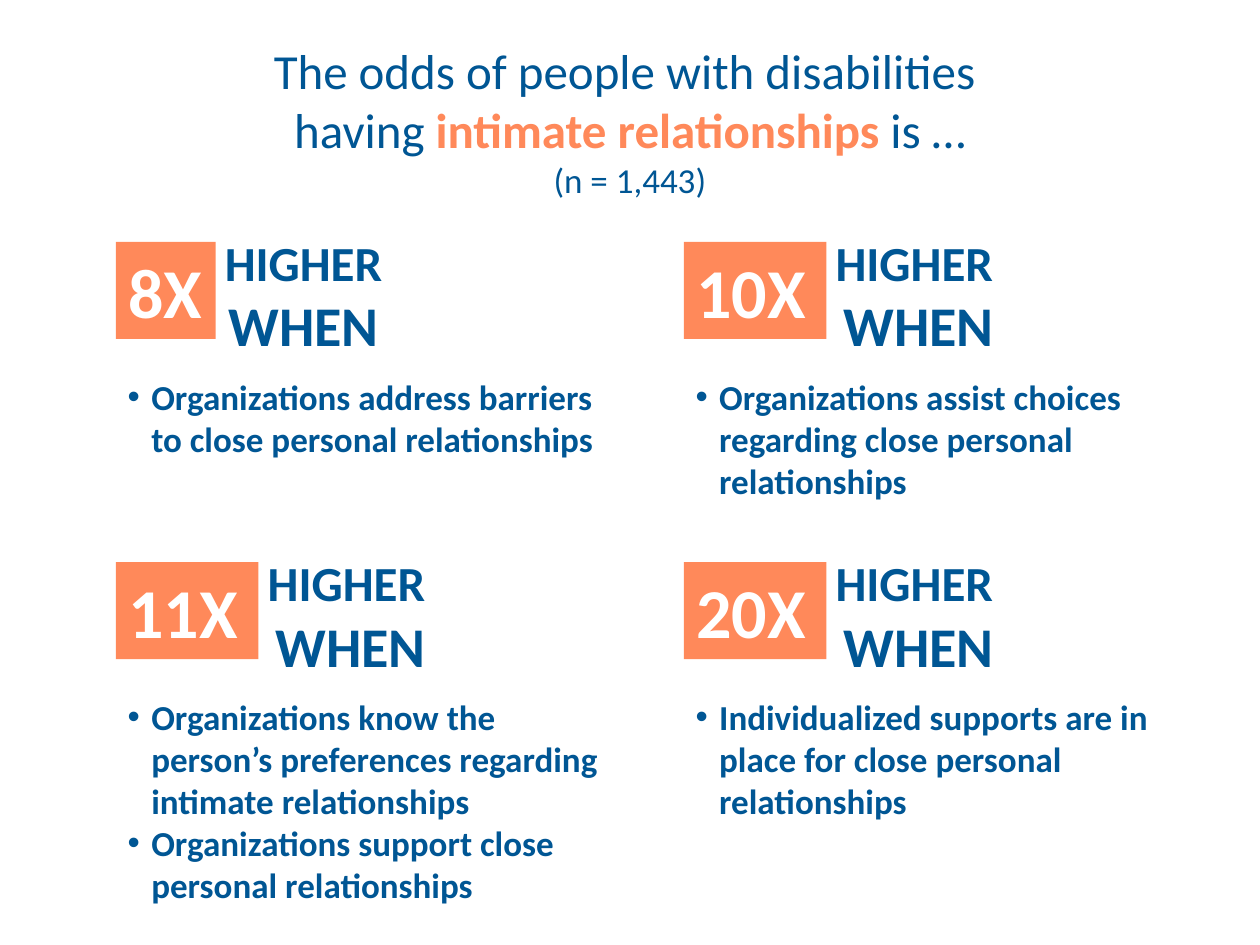
from lxml import etree
from pptx import Presentation
from pptx.dml.color import RGBColor
from pptx.enum.shapes import MSO_SHAPE as Shape
from pptx.enum.text import MSO_ANCHOR as Anchor, MSO_AUTO_SIZE as AutoSize, PP_ALIGN as Align
from pptx.oxml.ns import qn
from pptx.util import Pt

BLUE, CORAL, WHITE = "005694", "FF895A", "FFFFFF"
PLAIN = {"name": "Calibri", "bold": False}
BOLD = {"name": "Calibri", "bold": True}

# Badge text, indent of WHEN, bullets
PANELS = [
    ("8X", 72, ["Organizations address barriers to close personal relationships"]),
    ("10X", 99, ["Organizations assist choices regarding close personal relationships"]),
    ("11X", 99, ["Organizations know the person’s preferences regarding intimate relationships",
                 "Organizations support close personal relationships"]),
    ("20X", 99, ["Individualized supports are in place for close personal relationships"]),
]
HEIGHTS = [138, 163, 211, 163]


def color(value):
    return RGBColor.from_string(value)


def place(item, left, top, width, height):
    item.left, item.top, item.width, item.height = map(Pt, (left, top, width, height))


def setup_frame(frame):
    settings = {"word_wrap": True, "auto_size": AutoSize.NONE, "vertical_anchor": Anchor.TOP}
    for key, value in settings.items():
        setattr(frame, key, value)


def add_para(frame, first=False, align=Align.LEFT, before=0):
    para = frame.paragraphs[0] if first else frame.add_paragraph()
    settings = {"alignment": align, "line_spacing": 1.0,
                "space_before": Pt(before), "space_after": Pt(0)}
    for key, value in settings.items():
        setattr(para, key, value)
    return para


def add_span(para, text, size, fill, style):
    span = para.add_run()
    span.text = text
    for key, value in {**style, "size": Pt(size)}.items():
        setattr(span.font, key, value)
    span.font.color.rgb = color(fill)


def set_indent(para, left, hanging=0, bullet=None):
    props = para._p.get_or_add_pPr()
    props.set("marL", str(Pt(left)))
    props.set("indent", str(Pt(-hanging)))
    if bullet:
        etree.SubElement(props, qn("a:buFont")).set("typeface", "Arial")
        etree.SubElement(props, qn("a:buChar")).set("char", bullet)
    else:
        etree.SubElement(props, qn("a:buNone"))


def build_title(title, left, top, width, height):
    place(title, left, top, width, height)
    frame = title.text_frame
    setup_frame(frame)
    para = add_para(frame, first=True, align=Align.CENTER)
    add_span(para, "The odds of people with disabilities ", 28, BLUE, PLAIN)
    para.add_line_break()
    add_span(para, "having ", 28, BLUE, PLAIN)
    add_span(para, "intimate relationships", 28, CORAL, BOLD)
    add_span(para, " is …", 28, BLUE, PLAIN)
    add_span(add_para(frame, align=Align.CENTER), "(n = 1,443)", 20, BLUE, PLAIN)


def build_badge(page, text, left, top, width, height):
    badge = page.shapes.add_shape(Shape.RECTANGLE, *map(Pt, (left, top, width, height)))
    badge.shadow.inherit = False
    badge.fill.solid()
    badge.fill.fore_color.rgb = color(CORAL)
    badge.line.fill.background()
    setup_frame(badge.text_frame)
    badge.text_frame.margin_right = 0
    add_span(add_para(badge.text_frame, first=True), text, 40, WHITE, BOLD)


def build_panel(page, body, panel, left, top, width, height):
    multiple, when_indent, bullets = panel
    badge_width = 57 if len(multiple) == 2 else 81.5

    # Heading beside the badge
    place(body, left, top, width, height)
    frame = body.text_frame
    setup_frame(frame)
    headings = [("HIGHER", 28, badge_width + 13), ("WHEN", 32, when_indent)]
    for index, (text, size, indent) in enumerate(headings):
        para = add_para(frame, first=index == 0)
        set_indent(para, indent)
        add_span(para, text, size, BLUE, BOLD)

    # Bulleted conditions
    for index, text in enumerate(bullets):
        para = add_para(frame, before=10 if index == 0 else 0)
        set_indent(para, 28, 13.5, "•")
        add_span(para, text, 20, BLUE, BOLD)

    build_badge(page, multiple, left + 15, top + 9.25, badge_width, 55.5)


def main():
    deck = Presentation()
    deck.slide_width, deck.slide_height = Pt(720), Pt(540)
    page = deck.slides.add_slide(deck.slide_layouts.get_by_name("Comparison"))
    title, *bodies = page.placeholders
    build_title(title, 0, 19.5, 720, 99.5)
    for index, (body, panel) in enumerate(zip(bodies, PANELS)):
        row, column = divmod(index, 2)
        build_panel(page, body, panel, 51.25 + 324.5 * column, 129 + 183 * row,
                    309.5, HEIGHTS[index])
    deck.save("out.pptx")


if __name__ == "__main__":
    main()
